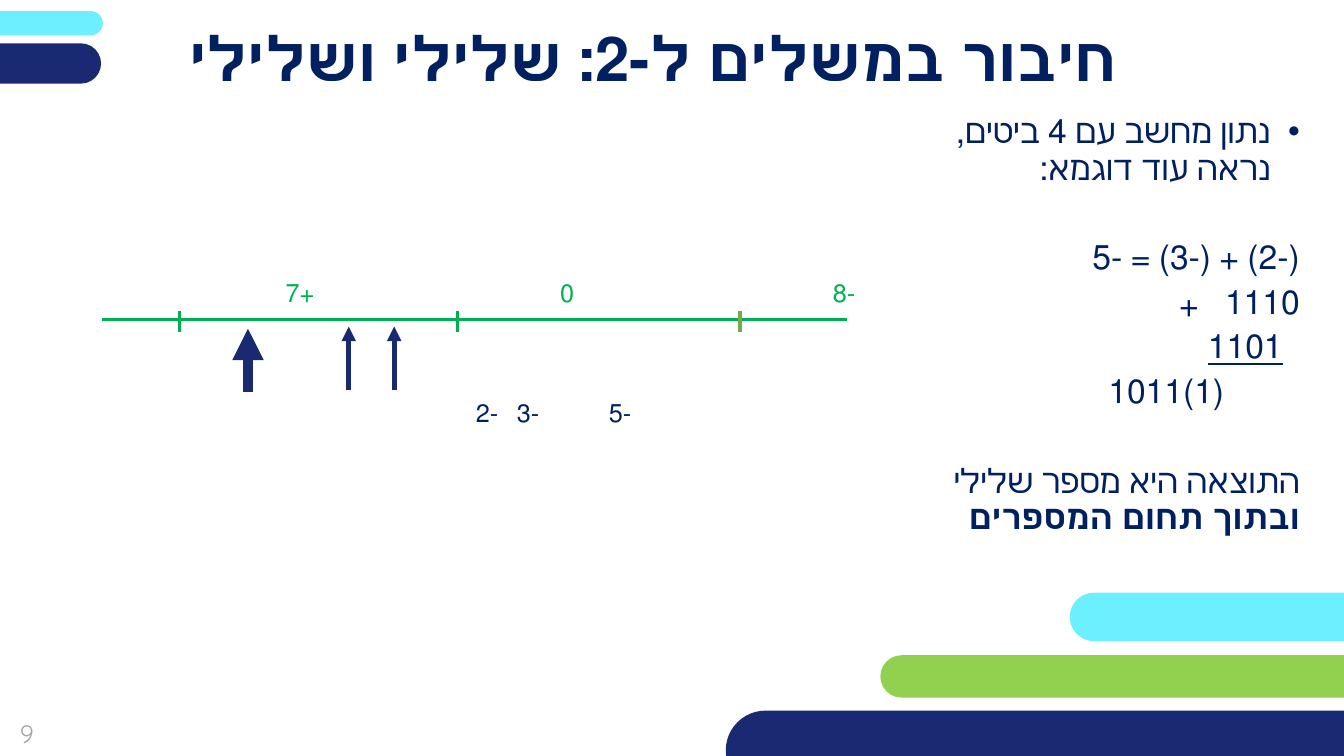
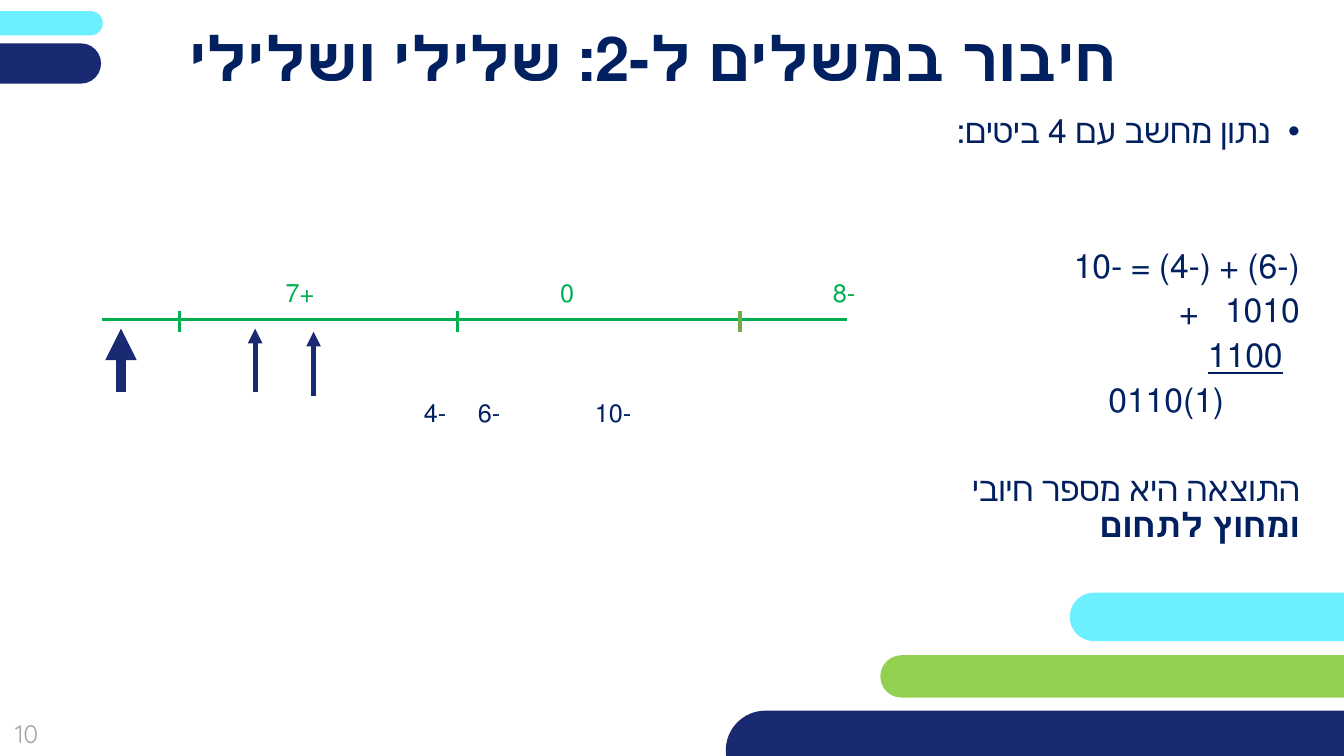
"""Build two slides on adding negative numbers in two's complement."""
from dataclasses import dataclass
from typing import NamedTuple

from lxml.etree import SubElement
from pptx import Presentation
from pptx.dml.color import RGBColor as Rgb
from pptx.enum.shapes import MSO_CONNECTOR as Link, MSO_SHAPE as Kind
from pptx.enum.text import MSO_ANCHOR as Anchor, MSO_AUTO_SIZE as Fit, PP_ALIGN as Align
from pptx.oxml.ns import qn
from pptx.util import Inches, Pt

WIDE, HIGH = Inches(13.33), Inches(7.5)
FONT = "Quicksand"
HEX = {
    "navy": "192A72", "ink": "002060", "aqua": "6CF0FF", "lime": "92D050",
    "green": "00B050", "olive": "70AD47", "gray": "A6A6A6",
}
TITLE = "חיבור במשלים ל-2: שלילי ושלילי"
AXIS = 42.27
REACH = 8.45


class Box(NamedTuple):
    """Left, top, width and height in percent of the slide."""
    left: float
    top: float
    width: float
    height: float

    def place(self) -> tuple[int, int, int, int]:
        return (across(self.left), down(self.top),
                across(self.width), down(self.height))


class Band(NamedTuple):
    box: Box
    tone: str


class Mark(NamedTuple):
    """A tick or label on the number line."""
    mid: float
    text: str


class Arrow(NamedTuple):
    mid: float
    top: float
    weight: float = 3.5


@dataclass(frozen=True)
class Row:
    """One paragraph of the body."""
    text: str
    bold: str = ""
    before: float = 0
    inset: float = 0
    under: bool = False
    bullet: bool = False


@dataclass(frozen=True)
class Case:
    """One worked sum."""
    page: int
    intro: str
    sum: str
    first: str
    second: str
    total: str
    result: str
    verdict: str
    gap: float
    plus: float
    marks: tuple[Mark, ...]
    arrows: tuple[Arrow, ...]

    def rows(self) -> list[Row]:
        return [
            Row(self.intro, bullet=True),
            Row(self.sum, before=self.gap),
            Row(self.first),
            Row(self.second, inset=0.17, under=True),
            Row(self.total, inset=0.75),
            Row(self.result, bold=self.verdict, before=32),
        ]


BANDS = (
    Band(Box(54, 94, 49.13, 10.53), "navy"),
    Band(Box(79.6, 78.4, 28.65, 6.4), "aqua"),
    Band(Box(-10.05, 1.47, 17.7, 3.2), "aqua"),
    Band(Box(-16.88, 5.73, 24.4, 5.33), "navy"),
    Band(Box(65.5, 86.67, 39.1, 5.6), "lime"),
)
TICKS = ((13.35, "green"), (34.05, "green"), (55.05, "olive"))
SCALE = (Mark(62.8, "-8"), Mark(42.19, "0"), Mark(22.32, "+7"))
CASES = (
    Case(9, "נתון מחשב עם 4 ביטים, נראה עוד דוגמא:", "(-2) + (-3) = -5",
         "1110", "1101", "(1)1011", "התוצאה היא מספר שלילי ",
         "ובתוך תחום המספרים", 32, 40.08,
         (Mark(46.13, "-5"), Mark(39.29, "-3"), Mark(36.24, "-2")),
         (Arrow(29.33, 43.2), Arrow(25.95, 43.2), Arrow(18.45, 43.47, 7.5))),
    Case(10, "נתון מחשב עם 4 ביטים:", "(-6) + (-4) = -10",
         "1010", "1100", "(1)0110", "התוצאה היא מספר חיובי ",
         "ומחוץ לתחום", 64, 41.2,
         (Mark(45.61, "-10"), Mark(36.38, "-6"), Mark(32.37, "-4")),
         (Arrow(23.33, 43.87), Arrow(18.98, 43.47), Arrow(9, 43.47, 7.5))),
)


def across(part: float) -> int:
    return round(WIDE * part / 100)


def down(part: float) -> int:
    return round(HIGH * part / 100)


def tint(name: str) -> Rgb:
    return Rgb.from_string(HEX[name])


def style(para, size: float, tone: str, align=Align.CENTER, rtl: bool = True) -> None:
    para.alignment = align
    if rtl:
        para._p.get_or_add_pPr().set("rtl", "1")
    font = para.font
    font.name, font.size = FONT, Pt(size)
    font.color.rgb = tint(tone)


def label(slide, box: Box, text: str, size: float, tone: str, rtl: bool = True) -> None:
    frame = slide.shapes.add_textbox(*box.place()).text_frame
    frame.word_wrap = True
    frame.vertical_anchor = Anchor.MIDDLE
    frame.text = text
    style(frame.paragraphs[0], size, tone, rtl=rtl)


def line(slide, start: tuple[float, float], end: tuple[float, float],
         tone: str, weight: float, head: bool = False) -> None:
    link = slide.shapes.add_connector(
        Link.STRAIGHT, across(start[0]), down(start[1]), across(end[0]), down(end[1]))
    link.line.color.rgb = tint(tone)
    link.line.width = Pt(weight)
    props = link.element.spPr
    if head:
        SubElement(props.find(qn("a:ln")), qn("a:tailEnd"), type="triangle")
    SubElement(props, qn("a:effectLst"))


def frame_slide(slide, page: int) -> None:
    for box, tone in BANDS:
        band = slide.shapes.add_shape(Kind.ROUNDED_RECTANGLE, *box.place())
        band.adjustments[0] = 0.5
        band.shadow.inherit = False
        band.fill.solid()
        band.fill.fore_color.rgb = tint(tone)
        band.line.fill.background()
    label(slide, Box(-1.35, 93.2, 6.68, 7.6), str(page), 18, "gray", rtl=False)

    title = slide.shapes.title
    title.left, title.top, title.width, title.height = Box(8.4, 2.27, 80.4, 10.53).place()
    frame = title.text_frame
    frame.auto_size = Fit.NONE
    frame.vertical_anchor = Anchor.MIDDLE
    frame.margin_left = frame.margin_right = frame.margin_top = frame.margin_bottom = 0
    frame.text = TITLE
    para = frame.paragraphs[0]
    style(para, 44, "ink")
    para.font.bold = True


def body(slide, rows: list[Row]) -> None:
    frame = slide.shapes.add_textbox(*Box(67, 14.53, 30.45, 59.2).place()).text_frame
    frame.word_wrap = True
    for spot, row in enumerate(rows):
        para = frame.add_paragraph() if spot else frame.paragraphs[0]
        para.line_spacing = 0.9
        para.space_before, para.space_after = Pt(row.before), Pt(6)
        props = para._p.get_or_add_pPr()
        inset = Inches(0.29 if row.bullet else row.inset)
        props.set("marL", str(inset))
        props.set("indent", str(-inset if row.bullet else 0))
        if row.bullet:
            SubElement(props, qn("a:buFont"), typeface="Arial")
            SubElement(props, qn("a:buChar"), char="•")
        style(para, 24, "ink", Align.RIGHT)
        run = para.add_run()
        run.text = row.text
        if row.under:
            run.font.underline = True
        if row.bold:
            run = para.add_run()
            run.text = row.bold
            run.font.bold = True


def axis(slide, case: Case) -> None:
    line(slide, (7.58, AXIS), (63, AXIS), "green", 2.5)
    for mid, tone in TICKS:
        line(slide, (mid, 41.2), (mid, 43.9), tone, 2.5)
    for marks, top, tone in ((SCALE, 36, "green"), (case.marks, 51.87, "ink")):
        for mid, text in marks:
            label(slide, Box(mid - 3, top, 6, 5.33), text, 18, tone)
    for mid, top, weight in case.arrows:
        line(slide, (mid, top + REACH), (mid, top), "navy", weight, head=True)


def main() -> None:
    deck = Presentation()
    deck.slide_width, deck.slide_height = WIDE, HIGH
    for case in CASES:
        slide = deck.slides.add_slide(deck.slide_layouts[5])
        frame_slide(slide, case.page)
        body(slide, case.rows())
        label(slide, Box(86.47, case.plus - 3.1, 4, 6.2), "+", 24, "ink")
        axis(slide, case)
    deck.save("out.pptx")


if __name__ == "__main__":
    main()
